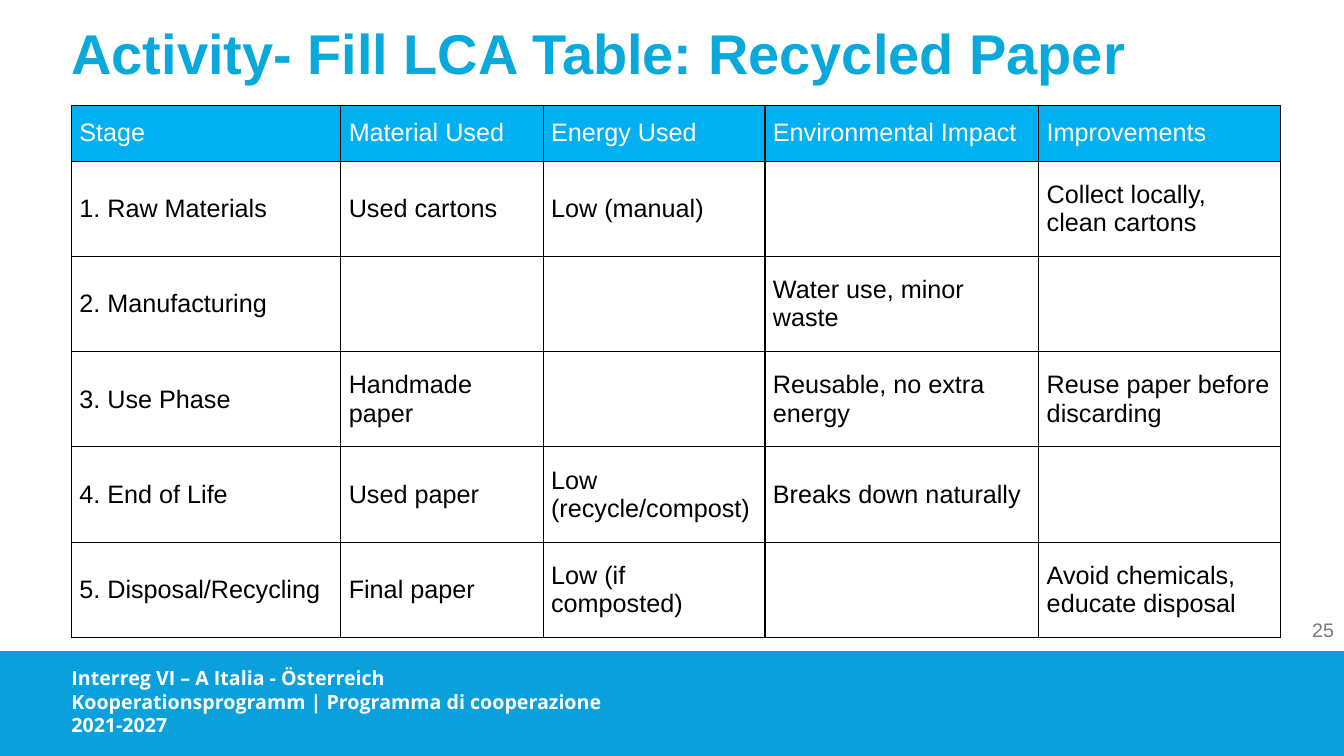
"""Builds the life cycle table slide for recycled paper."""
from dataclasses import dataclass

from lxml import etree
from pptx import Presentation
from pptx.dml.color import RGBColor
from pptx.enum.shapes import MSO_SHAPE
from pptx.enum.text import MSO_ANCHOR, MSO_AUTO_SIZE, PP_ALIGN
from pptx.oxml.ns import qn
from pptx.slide import Slide
from pptx.table import _Cell
from pptx.text.text import TextFrame
from pptx.util import Cm, Pt

RECT = MSO_SHAPE.RECTANGLE
TOP, MIDDLE = MSO_ANCHOR.TOP, MSO_ANCHOR.MIDDLE
LEFT, RIGHT = PP_ALIGN.LEFT, PP_ALIGN.RIGHT
FIXED = MSO_AUTO_SIZE.NONE


@dataclass(frozen=True)
class Theme:
    band: str = "0AA0DC"
    title: str = "0AA9DC"
    head: str = "00B0F0"
    white: str = "FFFFFF"
    black: str = "000000"
    grey: str = "797979"
    sans: str = "Arial"
    foot: str = "Open Sans"
    large: int = 40
    body: int = 18
    small: int = 14


@dataclass(frozen=True)
class Style:
    size: int
    color: str
    font: str
    bold: bool = False
    align: PP_ALIGN = LEFT
    anchor: MSO_ANCHOR = TOP
    space: float = 1.0


@dataclass(frozen=True)
class Label:
    text: str
    left: float
    top: float
    width: float
    height: float
    style: Style


THEME = Theme()
TITLE = Style(THEME.large, THEME.title, THEME.sans, bold=True, space=0.9)
HEAD = Style(THEME.body, THEME.white, THEME.sans, anchor=MIDDLE)
BODY = Style(THEME.body, THEME.black, THEME.sans, anchor=MIDDLE)
FOOT = Style(THEME.small, THEME.white, THEME.foot, bold=True)
PAGE = Style(THEME.small, THEME.grey, THEME.sans, align=RIGHT, anchor=MIDDLE)

LABELS = [
    Label("Interreg VI – A Italia - Österreich\v"
          "Kooperationsprogramm | Programma di cooperazione\n2021-2027",
          1.55, 16.66, 15.19, 2.06, FOOT),
    Label("25", 32.58, 15.35, 1.29, 1.02, PAGE),
]

COLS = [6.79, 5.1, 5.59, 6.9, 6.09]
HEAD_ROW, BODY_ROW = 1.41, 2.4
ROWS = [
    ["Stage", "Material Used", "Energy Used", "Environmental Impact", "Improvements"],
    ["1. Raw Materials", "Used cartons", "Low (manual)", "",
     "Collect locally, clean cartons"],
    ["2. Manufacturing", "", "", "Water use, minor waste", ""],
    ["3. Use Phase", "Handmade paper", "", "Reusable, no extra energy",
     "Reuse paper before discarding"],
    ["4. End of Life", "Used paper", "Low (recycle/compost)",
     "Breaks down naturally", ""],
    ["5. Disposal/Recycling", "Final paper", "Low (if composted)", "",
     "Avoid chemicals, educate disposal"],
]


def write(frame: TextFrame, text: str, style: Style) -> None:
    frame.text = text
    frame.word_wrap = True
    frame.vertical_anchor = style.anchor
    for para in frame.paragraphs:
        para.alignment = style.align
        para.line_spacing = style.space
        for run in para.runs:
            run.font.size = Pt(style.size)
            run.font.name = style.font
            run.font.bold = style.bold
            run.font.color.rgb = RGBColor.from_string(style.color)


def add_title(slide: Slide, text: str) -> None:
    title = slide.shapes.title
    title.left, title.top = Cm(1.8), Cm(0.66)
    title.width, title.height = Cm(30.5), Cm(2)
    frame = title.text_frame
    frame.margin_left = frame.margin_right = 0
    frame.margin_top = frame.margin_bottom = 0
    frame.auto_size = FIXED
    write(frame, text, TITLE)


def add_band(slide: Slide) -> None:
    band = slide.shapes.add_shape(RECT, 0, Cm(16.41), Cm(33.87), Cm(2.64))
    band.shadow.inherit = False
    band.fill.solid()
    band.fill.fore_color.rgb = RGBColor.from_string(THEME.band)
    band.line.fill.background()


def add_label(slide: Slide, label: Label) -> None:
    box = slide.shapes.add_textbox(
        Cm(label.left), Cm(label.top), Cm(label.width), Cm(label.height))
    write(box.text_frame, label.text, label.style)


def add_edges(cell: _Cell) -> None:
    props = cell._tc.get_or_add_tcPr()
    for spot, side in enumerate(("a:lnL", "a:lnR", "a:lnT", "a:lnB")):
        line = etree.Element(qn(side), w=str(Pt(1)))
        fill = etree.SubElement(line, qn("a:solidFill"))
        etree.SubElement(fill, qn("a:srgbClr"), val=THEME.black)
        props.insert(spot, line)


def fill_cell(cell: _Cell, text: str, head: bool) -> None:
    cell.margin_left = cell.margin_right = Cm(0.2)
    cell.margin_top = cell.margin_bottom = Cm(0.1)
    cell.vertical_anchor = MIDDLE
    if head:
        cell.fill.solid()
        cell.fill.fore_color.rgb = RGBColor.from_string(THEME.head)
    else:
        cell.fill.background()
    add_edges(cell)
    write(cell.text_frame, text, HEAD if head else BODY)


def add_grid(slide: Slide) -> None:
    high = HEAD_ROW + BODY_ROW * (len(ROWS) - 1)
    table = slide.shapes.add_table(
        len(ROWS), len(COLS), Cm(1.8), Cm(2.65), Cm(sum(COLS)), Cm(high)).table
    for col, width in zip(table.columns, COLS):
        col.width = Cm(width)
    for row, texts in enumerate(ROWS):
        table.rows[row].height = Cm(BODY_ROW if row else HEAD_ROW)
        for col, text in enumerate(texts):
            fill_cell(table.cell(row, col), text, row == 0)


def main() -> None:
    deck = Presentation()
    deck.slide_width, deck.slide_height = Cm(33.87), Cm(19.05)
    slide = deck.slides.add_slide(deck.slide_layouts[5])
    add_band(slide)
    add_title(slide, "Activity- Fill LCA Table: Recycled Paper")
    for label in LABELS:
        add_label(slide, label)
    add_grid(slide)
    deck.save("out.pptx")


if __name__ == "__main__":
    main()
